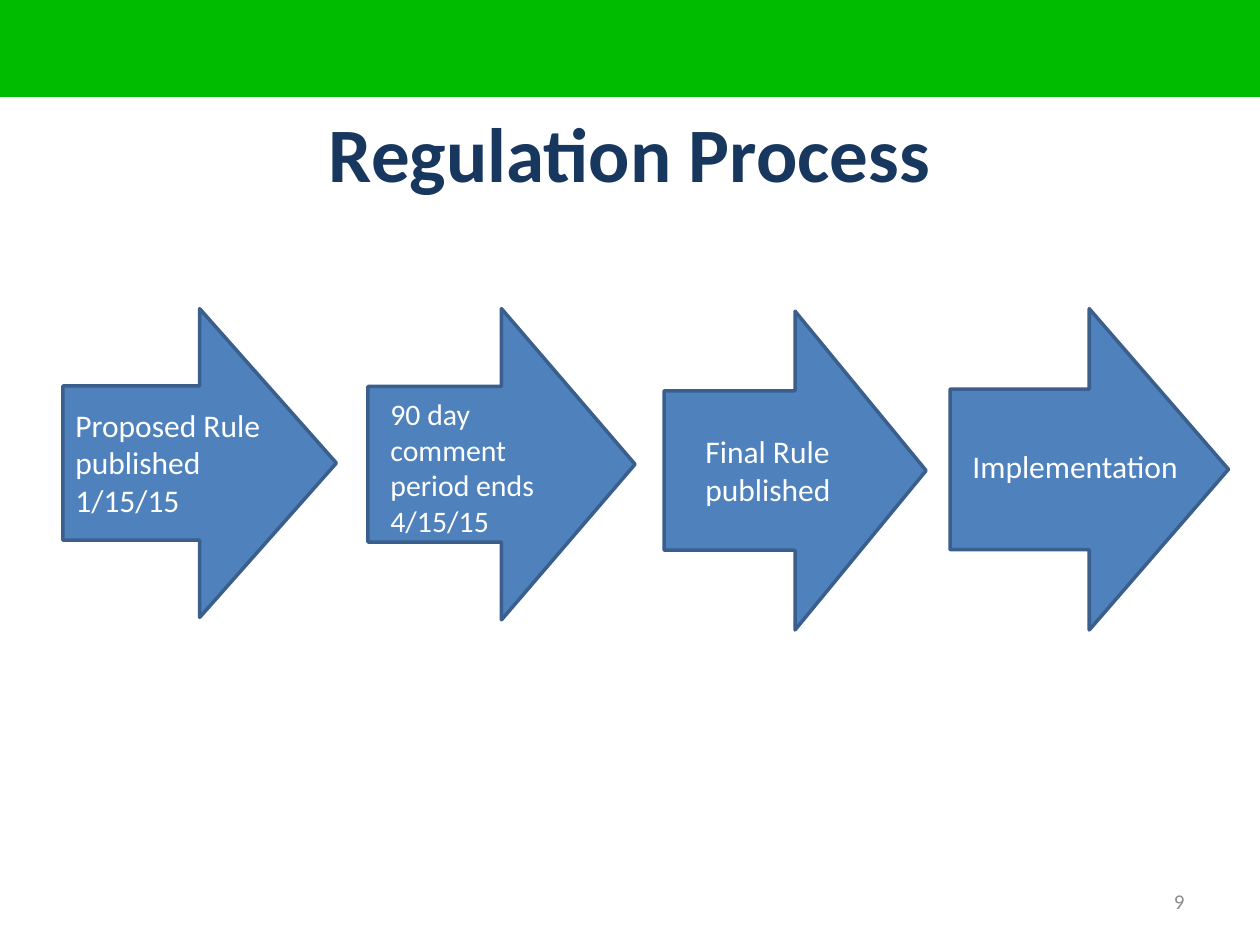
from dataclasses import dataclass

from pptx import Presentation
from pptx import util as u
from pptx.dml.color import RGBColor
from pptx.enum import shapes, text


@dataclass(frozen=True)
class Theme:
    font: str = "Calibri"
    band: str = "00BC00"
    title: str = "17375E"
    arrow: str = "4F81BD"
    outline: str = "3A5F8C"
    label: str = "FFFFFF"
    number: str = "8C8C8C"
    title_size: int = 44
    label_size: int = 18
    small_label_size: int = 17
    number_size: int = 12
    outline_width: int = 2


def write(frame, content, *, theme, size, color, bold=False,
          align=text.PP_ALIGN.LEFT, anchor=text.MSO_ANCHOR.TOP, right_inset=0.1):
    frame.word_wrap = True
    frame.vertical_anchor = anchor
    frame.margin_right = u.Inches(right_inset)
    paragraph = frame.paragraphs[0]
    paragraph.alignment = align
    run = paragraph.add_run()
    run.text = content
    run.font.name = theme.font
    run.font.size = u.Pt(size)
    run.font.bold = bold
    run.font.color.rgb = RGBColor.from_string(color)


class SlideBuilder:
    COLUMNS = 100
    ROWS = 75

    def __init__(self, presentation, theme):
        self.theme = theme
        self.slide = presentation.slides.add_slide(presentation.slide_layouts[6])
        self.column = presentation.slide_width / self.COLUMNS
        self.row = presentation.slide_height / self.ROWS

    def place(self, left, top, width, height):
        return (round(left * self.column), round(top * self.row),
                round(width * self.column), round(height * self.row))

    def shape(self, kind, area, fill, outline=None):
        shape = self.slide.shapes.add_shape(kind, *self.place(*area))
        shape.shadow.inherit = False
        shape.fill.solid()
        shape.fill.fore_color.rgb = RGBColor.from_string(fill)
        if outline:
            shape.line.color.rgb = RGBColor.from_string(outline)
            shape.line.width = u.Pt(self.theme.outline_width)
        else:
            shape.line.fill.background()

    def band(self, height):
        self.shape(shapes.MSO_SHAPE.RECTANGLE, (0, 0, self.COLUMNS, height),
                   self.theme.band)

    def arrow(self, area):
        self.shape(shapes.MSO_SHAPE.RIGHT_ARROW, area,
                   self.theme.arrow, self.theme.outline)

    def text(self, content, area, **style):
        shape = self.slide.shapes.add_textbox(*self.place(*area))
        write(shape.text_frame, content, theme=self.theme, **style)

    def title(self, content):
        self.text(content, (5, 5.8, 90, 12.5), size=self.theme.title_size,
                  color=self.theme.title, bold=True,
                  align=text.PP_ALIGN.CENTER, anchor=text.MSO_ANCHOR.MIDDLE)

    def number(self, content):
        self.text(content, (71.7, 69.5, 23.3, 4), size=self.theme.number_size,
                  color=self.theme.number,
                  align=text.PP_ALIGN.RIGHT, anchor=text.MSO_ANCHOR.MIDDLE)

    def label(self, content, area, size):
        self.text(content, area, size=size, color=self.theme.label,
                  right_inset=0.15)


def main():
    presentation = Presentation()
    presentation.slide_width = u.Inches(10)
    presentation.slide_height = u.Inches(7.5)
    theme = Theme()
    builder = SlideBuilder(presentation, theme)
    builder.band(7.7)
    builder.title("Regulation Process")
    builder.number("9")

    steps = [
        ("Proposed Rule published 1/15/15", (5, 24.5, 21.7, 24.5),
         (5, 31.7, 19.1, 10.1), theme.label_size),
        ("90 day comment period ends 4/15/15", (29.2, 24.5, 21.2, 24.7),
         (30, 30.9, 17.8, 12.5), theme.small_label_size),
        ("Final Rule published", (52.7, 24.7, 20.8, 25.3),
         (55, 33.8, 14.2, 7.1), theme.label_size),
        ("Implementation", (75.4, 24.5, 22.1, 25.5),
         (76.2, 35, 19.6, 4), theme.label_size),
    ]
    for content, arrow_area, label_area, size in steps:
        builder.arrow(arrow_area)
        builder.label(content, label_area, size)

    presentation.save("out.pptx")


if __name__ == "__main__":
    main()
